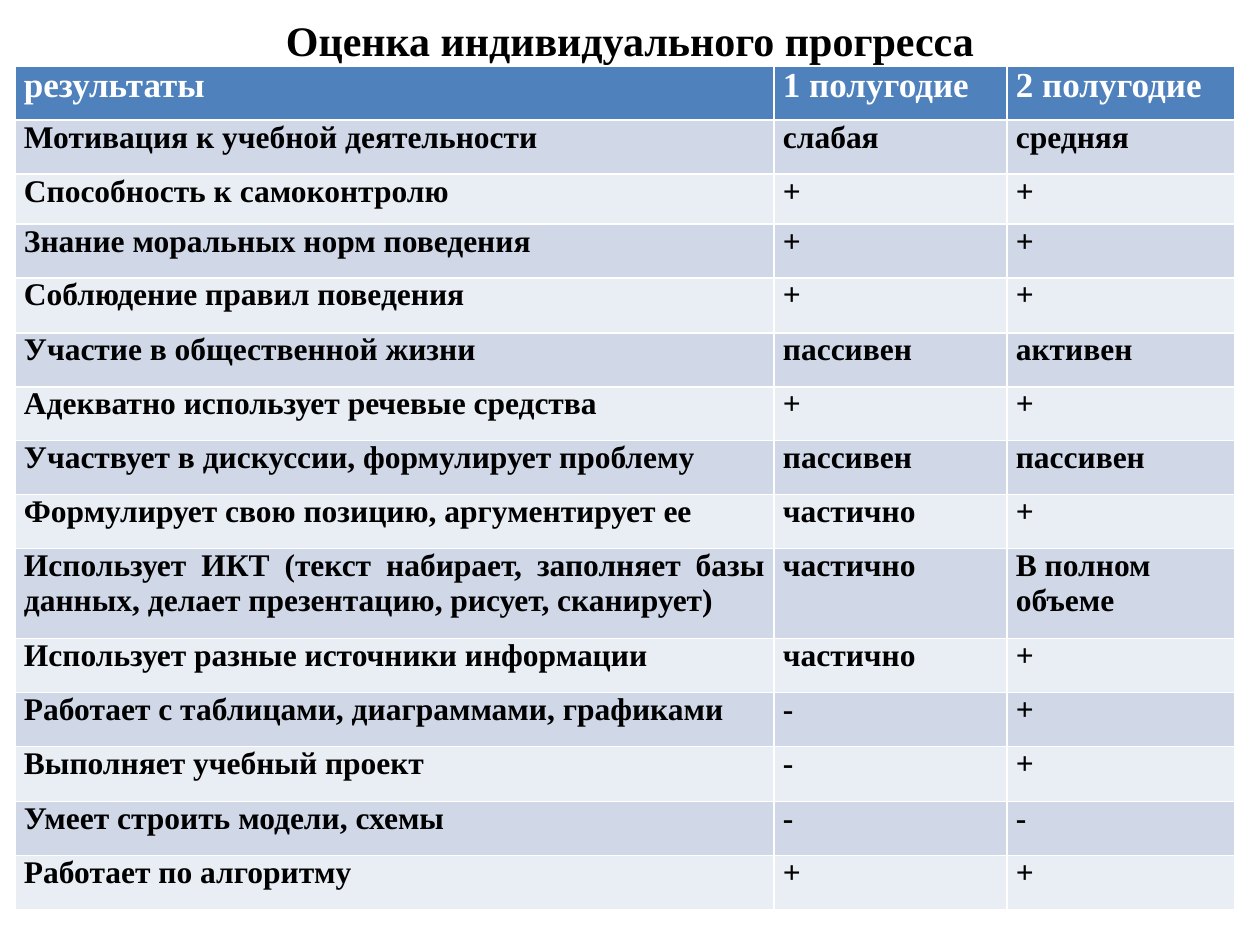
from itertools import pairwise

from pptx import Presentation
from pptx.dml.color import RGBColor
from pptx.enum.text import MSO_ANCHOR as Anchor, PP_ALIGN as Align
from pptx.util import Pt

PX = 914400 / 126
FONT = "Times New Roman"


def px(length):
    return round(length * PX)


def format_text(para, size, color, align):
    para.alignment = align
    for span in para.runs:
        span.font.name = FONT
        span.font.size = Pt(size)
        span.font.bold = True
        span.font.color.rgb = RGBColor.from_string(color)


deck = Presentation()
deck.slide_width, deck.slide_height = px(1260), px(945)
page = deck.slides.add_slide(deck.slide_layouts[6])

title = page.shapes.add_textbox(px(63), px(2), px(1134), px(76)).text_frame
title.word_wrap = True
title.vertical_anchor = Anchor.MIDDLE
title.text = "Оценка индивидуального прогресса"
format_text(title.paragraphs[0], 24, "000000", Align.CENTER)

results = [
    ("результаты", "1 полугодие", "2 полугодие"),
    ("Мотивация к учебной деятельности", "слабая", "средняя"),
    ("Способность к самоконтролю", "+", "+"),
    ("Знание моральных норм поведения", "+", "+"),
    ("Соблюдение правил поведения", "+", "+"),
    ("Участие в общественной жизни", "пассивен", "активен"),
    ("Адекватно использует речевые средства", "+", "+"),
    ("Участвует в дискуссии, формулирует проблему", "пассивен", "пассивен"),
    ("Формулирует свою позицию, аргументирует ее", "частично", "+"),
    ("Использует ИКТ (текст набирает, заполняет базы данных, "
     "делает презентацию, рисует, сканирует)", "частично", "В полном объеме"),
    ("Использует разные источники информации", "частично", "+"),
    ("Работает с таблицами, диаграммами, графиками", "-", "+"),
    ("Выполняет учебный проект", "-", "+"),
    ("Умеет строить модели, схемы", "-", "-"),
    ("Работает по алгоритму", "+", "+"),
]
column_edges = [15, 774, 1007, 1235]
row_edges = [66, 120, 174, 224, 278, 333, 387, 441,
             495, 549, 639, 693, 747, 802, 856, 910]
left_aligned = {"Мотивация к учебной деятельности", "В полном объеме"}

# The default table style supplies the white cell borders.
table = page.shapes.add_table(
    len(results), 3, px(column_edges[0]), px(row_edges[0]),
    px(column_edges[-1] - column_edges[0]),
    px(row_edges[-1] - row_edges[0])).table
for column, (start, end) in zip(table.columns, pairwise(column_edges)):
    column.width = px(end - start)
for row, (start, end) in zip(table.rows, pairwise(row_edges)):
    row.height = px(end - start)

for r, texts in enumerate(results):
    if r == 0:
        fill, size, color = "4F81BD", 20, "FFFFFF"
    else:
        fill, size, color = ("D0D8E8" if r % 2 else "E9EDF4"), 18, "000000"
    for c, text in enumerate(texts):
        cell = table.cell(r, c)
        cell.fill.solid()
        cell.fill.fore_color.rgb = RGBColor.from_string(fill)
        cell.margin_left = cell.margin_right = px(9)
        cell.margin_top = cell.margin_bottom = 0
        cell.text_frame.text = text
        align = Align.LEFT if text in left_aligned else Align.JUSTIFY
        format_text(cell.text_frame.paragraphs[0], size, color, align)

deck.save("out.pptx")
